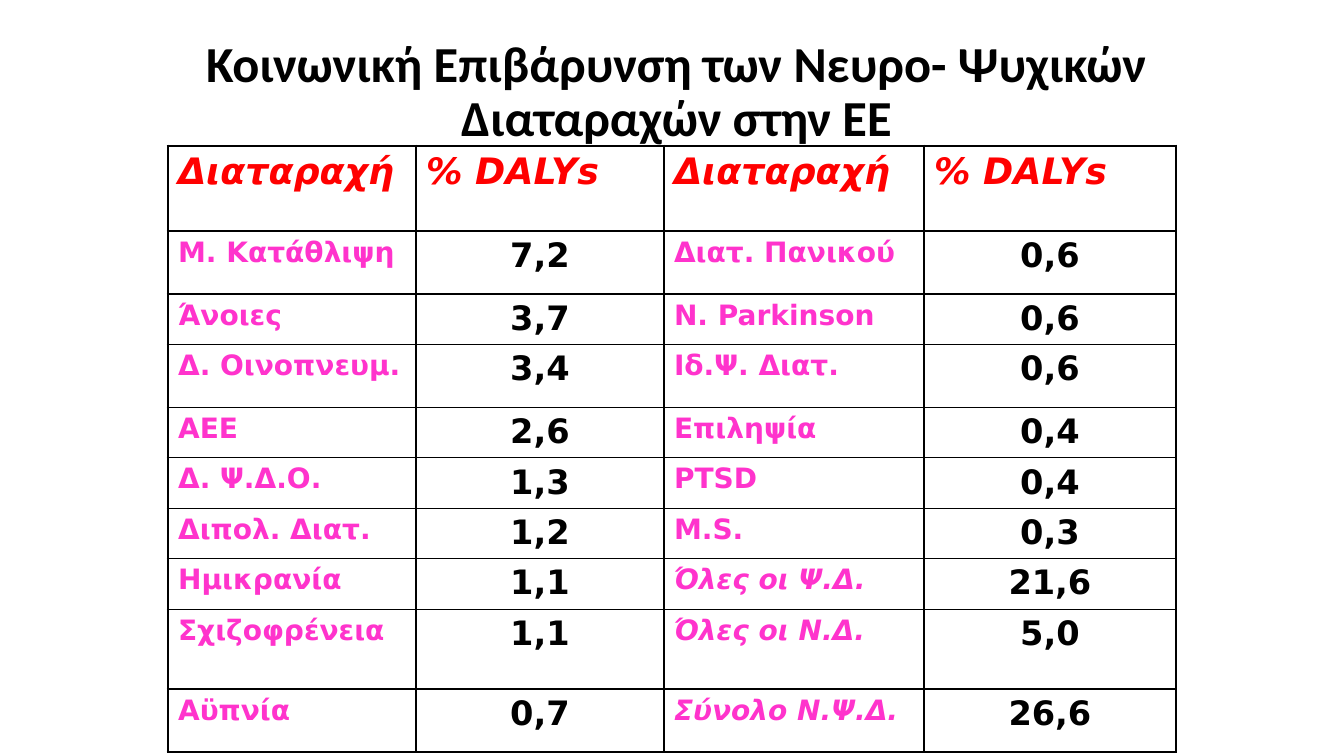
from lxml.etree import SubElement
from pptx import Presentation
from pptx.dml.color import RGBColor
from pptx.enum.text import MSO_ANCHOR, PP_ALIGN
from pptx.oxml.ns import qn
from pptx.util import Emu, Pt

EMU_PER_PX = 914400 / 100.8
BLACK, RED, PINK = "000000", "FF0000", "FF33CC"
THIN, THICK = 1, 2.25

COLUMN_WIDTHS = [248, 248, 260, 252]
ROW_HEIGHTS = [85, 63, 49, 63, 49, 49, 49, 49, 80, 63]
HEADER = ["Διαταραχή", "% DALYs"] * 2
DISORDERS = [
    ["Μ. Κατάθλιψη", "7,2", "Διατ. Πανικού", "0,6"],
    ["Άνοιες", "3,7", "Ν. Parkinson", "0,6"],
    ["Δ. Οινοπνευμ.", "3,4", "Ιδ.Ψ. Διατ.", "0,6"],
    ["ΑΕΕ", "2,6", "Επιληψία", "0,4"],
    ["Δ. Ψ.Δ.Ο.", "1,3", "PTSD", "0,4"],
    ["Διπολ. Διατ.", "1,2", "M.S.", "0,3"],
    ["Ημικρανία", "1,1", "Όλες οι Ψ.Δ.", "21,6"],
    ["Σχιζοφρένεια", "1,1", "Όλες οι Ν.Δ.", "5,0"],
    ["Αϋπνία", "0,7", "Σύνολο Ν.Ψ.Δ.", "26,6"],
]
FIRST_TOTAL_ROW = 7


def px(length):
    return Emu(round(length * EMU_PER_PX))


def color(value):
    return RGBColor.from_string(value)


def write(frame, text, size, ink, font="DejaVu Sans", italic=False,
          align=PP_ALIGN.LEFT, line_spacing=None):
    frame.word_wrap = True
    para = frame.paragraphs[0]
    para.alignment = align
    para.line_spacing = line_spacing
    span = para.add_run()
    span.text = text
    span.font.name = font
    span.font.size = Pt(size)
    span.font.bold = True
    span.font.italic = italic
    span.font.color.rgb = color(ink)


def add_title(page, text):
    box = page.shapes.add_textbox(px(188), px(30), px(977), px(126))
    box.text_frame.vertical_anchor = MSO_ANCHOR.MIDDLE
    write(box.text_frame, text, 36, BLACK, font="Calibri",
          align=PP_ALIGN.CENTER, line_spacing=0.9)


def set_borders(cell, left, right, top, bottom):
    """Draw the four cell edges in black, with widths in points."""
    properties = cell._tc.get_or_add_tcPr()
    widths = {"a:lnL": left, "a:lnR": right, "a:lnT": top, "a:lnB": bottom}
    for position, (tag, width) in enumerate(widths.items()):
        line = SubElement(properties, qn(tag), w=str(Pt(width)))
        fill = SubElement(line, qn("a:solidFill"))
        SubElement(fill, qn("a:srgbClr"), val=BLACK)
        properties.insert(position, line)


def cell_format(row, column):
    if row == 0:
        return dict(size=26, ink=RED, italic=True)
    if column % 2:
        return dict(size=24, ink=BLACK, align=PP_ALIGN.CENTER)
    return dict(size=20, ink=PINK, italic=column == 2 and row >= FIRST_TOTAL_ROW)


def add_burden_table(page, rows):
    last_row, last_column = len(rows) - 1, len(COLUMN_WIDTHS) - 1
    frame = page.shapes.add_table(len(rows), len(COLUMN_WIDTHS), px(168), px(146),
                                  px(sum(COLUMN_WIDTHS)), px(sum(ROW_HEIGHTS)))
    table = frame.table
    table.first_row = table.horz_banding = False
    for column, width in zip(table.columns, COLUMN_WIDTHS):
        column.width = px(width)
    for row, height in zip(table.rows, ROW_HEIGHTS):
        row.height = px(height)
    for r, texts in enumerate(rows):
        for c, text in enumerate(texts):
            cell = table.cell(r, c)
            cell.fill.background()
            write(cell.text_frame, text, **cell_format(r, c))
            set_borders(cell,
                        left=THICK if c == 0 else THIN,
                        right=THICK if c == last_column else THIN,
                        top=THICK if r == 0 else THIN,
                        bottom=THICK if r == last_row else THIN)


def main():
    deck = Presentation()
    deck.slide_width, deck.slide_height = px(1344), px(756)
    page = deck.slides.add_slide(deck.slide_layouts[6])
    add_title(page, "Κοινωνική Επιβάρυνση των Νευρο- Ψυχικών Διαταραχών στην ΕΕ")
    add_burden_table(page, [HEADER] + DISORDERS)
    deck.save("out.pptx")


if __name__ == "__main__":
    main()
